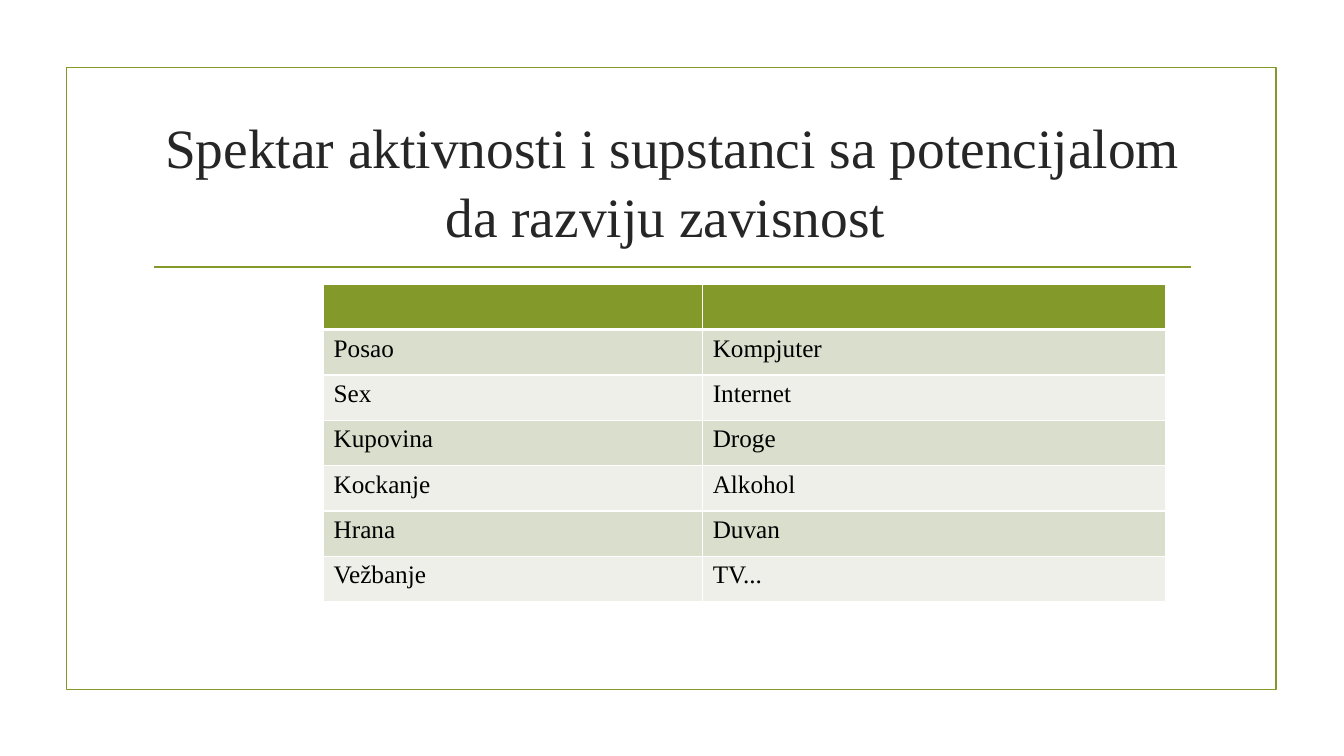
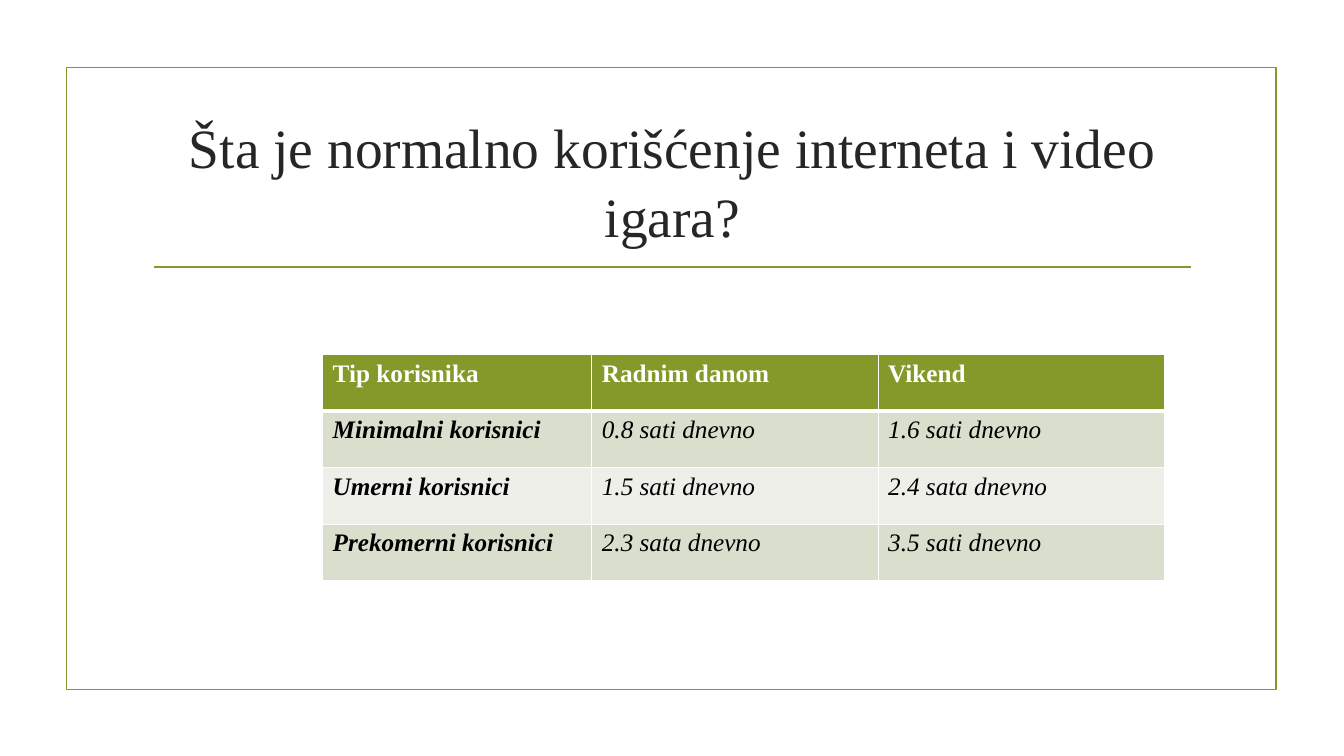
"""Build two framed slides, each with a title and a banded table."""
import dataclasses

import lxml.etree
import pptx
import pptx.dml.color
import pptx.enum.shapes
import pptx.enum.text
import pptx.oxml.ns
import pptx.util

Inches = pptx.util.Inches
Pt = pptx.util.Pt
qn = pptx.oxml.ns.qn


@dataclasses.dataclass(frozen=True)
class Theme:
    font: str = "Times New Roman"
    accent: str = "83992A"
    white: str = "FFFFFF"
    title_color: str = "262626"
    body_color: str = "000000"
    bands: tuple = ("D9DECD", "EDEFE8")
    title_size: float = 39.6
    title_spacing: float = 1.04
    body_size: float = 18
    line_width: float = 1.25
    grid_width: float = 1
    header_rule_width: float = 3


def rgb(color):
    return pptx.dml.color.RGBColor.from_string(color)


class SlideBuilder:
    def __init__(self, deck, theme):
        self.deck = deck
        self.theme = theme
        self.page = None

    def add_page(self, title):
        self.page = self.deck.slides.add_slide(self.deck.slide_layouts[6])
        self.add_frame()
        self.add_rule()
        self.add_title(title)

    def style_line(self, line):
        line.color.rgb = rgb(self.theme.accent)
        line.width = Pt(self.theme.line_width)

    def add_frame(self):
        frame = self.page.shapes.add_shape(
            pptx.enum.shapes.MSO_SHAPE.RECTANGLE,
            Inches(0.66), Inches(0.67), Inches(12), Inches(6.17))
        frame.shadow.inherit = False
        frame.fill.background()
        self.style_line(frame.line)

    def add_rule(self):
        rule = self.page.shapes.add_connector(
            pptx.enum.shapes.MSO_CONNECTOR.STRAIGHT,
            Inches(1.53), Inches(2.65), Inches(11.81), Inches(2.65))
        self.style_line(rule.line)
        lxml.etree.SubElement(rule.element.spPr, qn("a:effectLst"))

    def add_title(self, text):
        box = self.page.shapes.add_textbox(
            Inches(1.42), Inches(1.07), Inches(10.5), Inches(1.43))
        frame = box.text_frame
        frame.word_wrap = True
        frame.vertical_anchor = pptx.enum.text.MSO_ANCHOR.MIDDLE
        para = frame.paragraphs[0]
        para.alignment = pptx.enum.text.PP_ALIGN.CENTER
        para.line_spacing = self.theme.title_spacing
        self.add_span(para, text, self.theme.title_size, self.theme.title_color)

    def add_span(self, para, text, size, color, bold=False, italic=False):
        span = para.add_run()
        span.text = text
        span.font.name = self.theme.font
        span.font.size = Pt(size)
        span.font.color.rgb = rgb(color)
        span.font.bold = bold
        span.font.italic = italic

    def add_table(self, left, top, widths, row_height, rows, emphasis=False):
        theme = self.theme
        table = self.page.shapes.add_table(
            len(rows), len(widths), Inches(left), Inches(top),
            Inches(sum(widths)), Inches(row_height * len(rows))).table
        for column, width in zip(table.columns, widths):
            column.width = Inches(width)
        for row_index, texts in enumerate(rows):
            table.rows[row_index].height = Inches(row_height)
            header = row_index == 0
            fill = theme.accent if header else theme.bands[(row_index - 1) % 2]
            color = theme.white if header else theme.body_color
            for column_index, text in enumerate(texts):
                cell = table.cell(row_index, column_index)
                self.add_borders(cell, row_index)
                cell.fill.solid()
                cell.fill.fore_color.rgb = rgb(fill)
                para = cell.text_frame.paragraphs[0]
                if text:
                    self.add_span(
                        para, text, theme.body_size, color,
                        bold=header or (emphasis and column_index == 0),
                        italic=emphasis and not header)
                else:
                    para.font.size = Pt(theme.body_size)

    def add_borders(self, cell, row_index):
        properties = cell._tc.get_or_add_tcPr()
        heavy_edge = {0: "B", 1: "T"}.get(row_index)
        for edge in "LRTB":
            width = (self.theme.header_rule_width if edge == heavy_edge
                     else self.theme.grid_width)
            line = lxml.etree.SubElement(
                properties, qn(f"a:ln{edge}"), w=str(Pt(width)))
            fill = lxml.etree.SubElement(line, qn("a:solidFill"))
            lxml.etree.SubElement(fill, qn("a:srgbClr"), val=self.theme.white)


def main():
    deck = pptx.Presentation()
    deck.slide_width = Inches(13.33)
    deck.slide_height = Inches(7.5)
    builder = SlideBuilder(deck, Theme())

    builder.add_page(
        "Spektar aktivnosti i supstanci sa potencijalom da razviju zavisnost ")
    builder.add_table(3.21, 2.82, (3.76, 4.59), 0.45, (
        ("", ""),
        ("Posao", "Kompjuter"),
        ("Sex", "Internet"),
        ("Kupovina", "Droge"),
        ("Kockanje", "Alkohol"),
        ("Hrana", "Duvan"),
        ("Vežbanje", "TV..."),
    ))

    builder.add_page("Šta je normalno korišćenje interneta i video igara?")
    builder.add_table(3.2, 3.52, (2.67, 2.84, 2.84), 0.56, (
        ("Tip korisnika", "Radnim danom", "Vikend"),
        ("Minimalni korisnici", "0.8 sati dnevno", "1.6 sati dnevno"),
        ("Umerni korisnici", "1.5 sati dnevno", "2.4 sata dnevno"),
        ("Prekomerni korisnici", "2.3 sata dnevno", "3.5 sati dnevno"),
    ), emphasis=True)

    deck.save("out.pptx")


if __name__ == "__main__":
    main()
